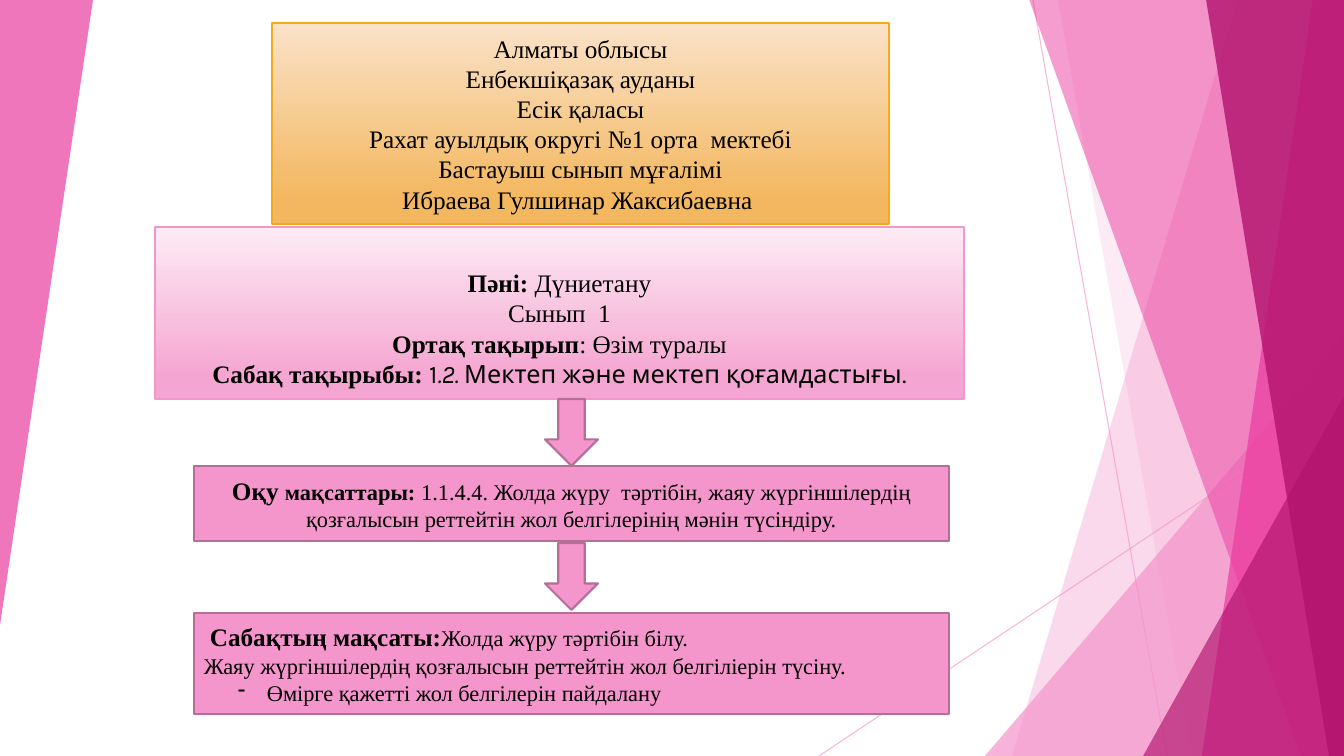
from lxml import etree
from pptx import Presentation, util as u
from pptx.dml.color import RGBColor
from pptx.enum import shapes, text
from pptx.oxml.ns import qn

PX = 914400 / 100.8
COLORS = {
    "pink": "F496CB", "magenta": "EB3D9F", "wine": "B2136D", "mauve": "B56F96",
    "cream": "FAE2C8", "amber": "F3B75F", "gold": "F2AC19",
    "blush": "FDEBF4", "rose": "F5A5D1", "black": "000000",
}
SERIF, SANS = "Times New Roman", "Karla"


def px(*lengths):
    return [u.Emu(round(length * PX)) for length in lengths]


def paint(fill, color, opacity=100):
    fill.solid()
    fill.fore_color.rgb = RGBColor.from_string(COLORS[color])
    if opacity < 100:
        tint = fill._xPr.find(".//" + qn("a:srgbClr"))
        etree.SubElement(tint, qn("a:alpha")).set("val", str(opacity * 1000))


deck = Presentation()
deck.slide_width, deck.slide_height = px(1344, 756)
slide = deck.slides.add_slide(deck.slide_layouts[6])
canvas = slide.shapes

for ends in [(1033, 0, 1167, 756), (1344, 406, 819, 756)]:
    ray = canvas.add_connector(shapes.MSO_CONNECTOR.STRAIGHT, *px(*ends))
    ray.line.width = u.Pt(0.75)
    paint(ray.line.fill, "pink", 70)
    etree.SubElement(ray._element.spPr, qn("a:effectLst"))

# Bands give top and bottom x; triangles give left, top, width, height, rotation.
facets = [
    ((1238, 1012), "pink", 36),
    ((1058, 1192), "pink", 20),
    ((985, 336, 359, 420, 0), "pink", 72),
    ((1029, 1301), "magenta", 50),
    ((1313, 1202), "magenta", 70),
    ((1206, 1329), "wine", 80),
    ((1143, 396, 201, 360, 0), "wine", 66),
    ((0, 0, 93, 625, 180), "magenta", 70),
]
for outline, color, opacity in facets:
    if len(outline) == 2:
        top_x, bottom_x = outline
        builder = canvas.build_freeform(top_x, -1, scale=PX)
        builder.add_line_segments([(1344, -1), (1344, 756), (bottom_x, 756)], close=True)
        facet = builder.convert_to_shape()
    else:
        facet = canvas.add_shape(shapes.MSO_SHAPE.ISOSCELES_TRIANGLE, *px(*outline[:4]))
        facet.adjustments[0] = 1
        facet.rotation = outline[4]
    facet.shadow.inherit = False
    paint(facet.fill, color, opacity)
    facet.line.fill.background()

school = [[(line, 18, False)] for line in (
    "Алматы облысы",
    "Енбекшіқазақ ауданы",
    "Есік қаласы",
    "Рахат ауылдық округі №1 орта  мектебі",
    "Бастауыш сынып мұғалімі",
    "Ибраева Гулшинар Жаксибаевна ",
)]
subject = [
    [("Пәні:", 18, True), (" Дүниетану", 18, False)],
    [("Сынып  1", 18, False)],
    [("Ортақ тақырып", 18, True), (": Өзім туралы", 18, False)],
    [("Сабақ тақырыбы: ", 18, True), ("1", 18, False, SANS), (".2. ", 18, False, SANS, True),
     ("Мектеп және мектеп қоғамдастығы.", 18, False, SANS)],
]
lesson_goals = [
    [("Сабақтың мақсаты:", 18, True), ("Жолда жүру тәртібін білу.", 16, False)],
    [("Жаяу жүргіншілердің қозғалысын реттейтін жол белгіліерін түсіну.", 16, False)],
    [("Өмірге қажетті жол белгілерін пайдалану", 16, False)],
]
study_goals = [
    [("Оқу ", 18, True), ("мақсаттары: ", 16, True),
     ("1.1.4.4. Жолда жүру  тәртібін, жаяу жүргіншілердің қозғалысын реттейтін "
      "жол белгілерінің мәнін түсіндіру.", 16, False)],
]

CENTER, LEFT = text.PP_ALIGN.CENTER, text.PP_ALIGN.LEFT
panels = [
    ((272, 23, 617, 201), ("cream", "amber"), "gold", 1, CENTER, 5, school),
    ((155, 227, 809, 172), ("blush", "rose"), "pink", 1, CENTER, 35, subject),
    ((194, 613, 755, 101), ("pink",), "mauve", 1.5, LEFT, 5, lesson_goals),
    ((194, 466, 755, 75), ("pink",), "mauve", 1.5, CENTER, 5, study_goals),
]
for place, shades, border, weight, align, top_inset, lines in panels:
    panel = canvas.add_shape(shapes.MSO_SHAPE.RECTANGLE, *px(*place))
    panel.shadow.inherit = False
    if len(shades) == 2:
        panel.fill.gradient()
        panel.fill.gradient_angle = 270
        for stop, shade, position in zip(panel.fill.gradient_stops, shades, (0, 0.88)):
            stop.color.rgb = RGBColor.from_string(COLORS[shade])
            stop.position = position
    else:
        paint(panel.fill, shades[0])
    paint(panel.line.fill, border)
    panel.line.width = u.Pt(weight)
    frame = panel.text_frame
    frame.word_wrap = True
    frame.vertical_anchor = text.MSO_ANCHOR.MIDDLE
    frame.margin_top, = px(top_inset)
    for number, pieces in enumerate(lines):
        paragraph = frame.add_paragraph() if number else frame.paragraphs[0]
        paragraph.alignment = align
        paint(paragraph.font.fill, "black")
        for wording, size, bold, *style in pieces:
            run = paragraph.add_run()
            run.text = wording
            font = paragraph.font if len(pieces) == 1 else run.font
            font.size, font.bold = u.Pt(size), bold
            font.name = style[0] if style else SERIF
            if len(style) == 2:
                font.italic = style[1]
    if lines is lesson_goals:
        for number, margin, indent in [(0, 6, 0), (2, 63, -29)]:
            layout = frame.paragraphs[number]._p.get_or_add_pPr()
            layout.set("marL", str(px(margin)[0]))
            layout.set("indent", str(px(indent)[0]))
        dash = etree.Element(qn("a:buChar"), char="-")
        layout.insert(0, dash)

for top in (399, 543):
    arrow = canvas.add_shape(shapes.MSO_SHAPE.DOWN_ARROW, *px(545, top, 53, 67))
    arrow.shadow.inherit = False
    paint(arrow.fill, "pink")
    paint(arrow.line.fill, "mauve")
    arrow.line.width = u.Pt(1.5)

deck.save("out.pptx")
